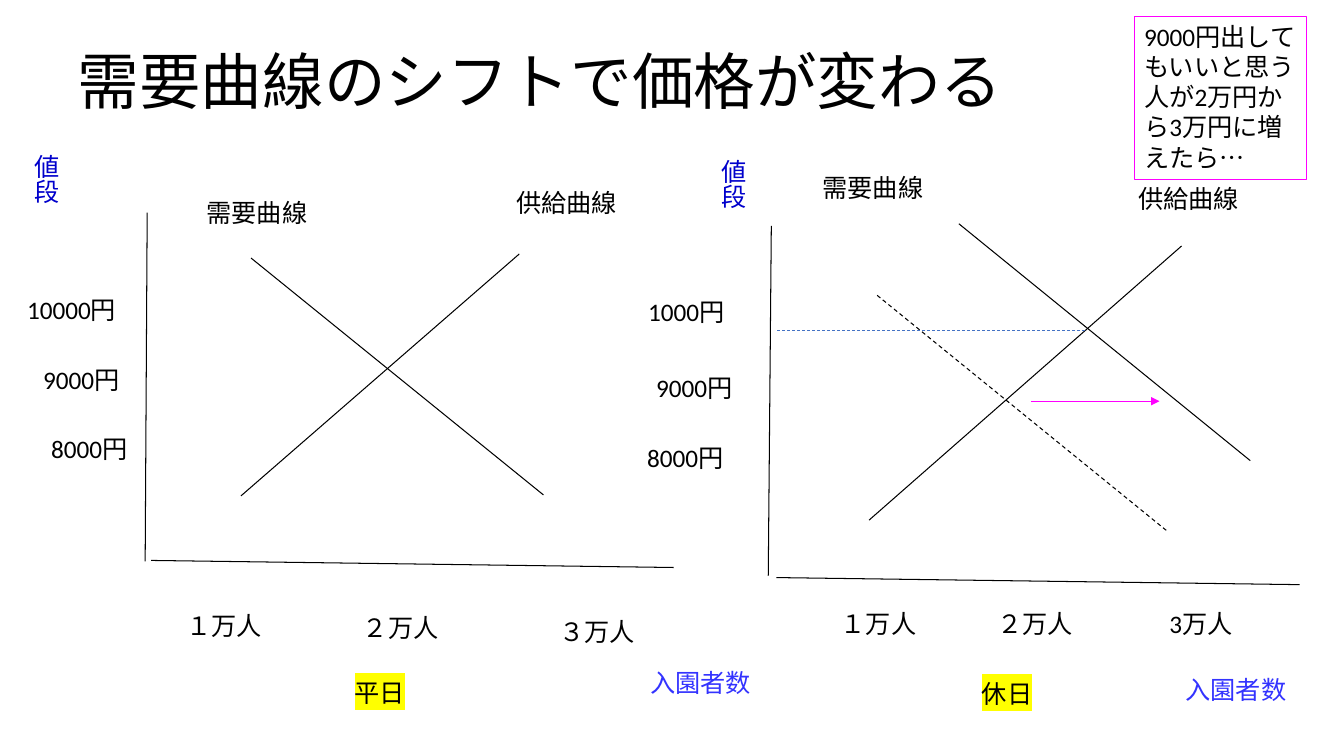
from dataclasses import dataclass

import pptx
import pptx.dml.color
import pptx.enum.dml
import pptx.enum.shapes
import pptx.enum.text
import pptx.oxml
import pptx.oxml.ns
import pptx.util
from pptx.util import Inches


@dataclass(frozen=True)
class Theme:
    font: str = "Calibri"
    title_size: int = 44
    body_size: int = 18
    ink: str = "000000"
    price: str = "0000CC"
    visitors: str = "3333FF"
    shift: str = "FF00FF"
    guide: str = "4472C4"
    marker: str = "FFFF00"
    thin: float = 0.5
    normal: float = 0.75


THEME = Theme()
LABEL_HEIGHT = 0.4


def rgb(color):
    return pptx.dml.color.RGBColor.from_string(color)


def element(tag, **attributes):
    node = pptx.oxml.parse_xml(f"<a:{tag} {pptx.oxml.ns.nsdecls('a')}/>")
    for key, value in attributes.items():
        node.set(key, value)
    return node


def style(paragraph, size, color):
    paragraph.alignment = pptx.enum.text.PP_ALIGN.LEFT
    paragraph.font.name = THEME.font
    paragraph.font.size = pptx.util.Pt(size)
    paragraph.font.color.rgb = rgb(color)


def add_title(slide, text):
    title = slide.shapes.title
    title.left, title.top = Inches(0.67), Inches(0.21)
    title.width, title.height = Inches(12), Inches(1.25)
    title.text_frame.text = text
    title.text_frame.vertical_anchor = pptx.enum.text.MSO_ANCHOR.MIDDLE
    heading = title.text_frame.paragraphs[0]
    heading.line_spacing = 0.9
    style(heading, THEME.title_size, THEME.ink)


def add_label(slide, text, left, top, width, height=LABEL_HEIGHT, color=THEME.ink):
    label = slide.shapes.add_textbox(
        Inches(left), Inches(top), Inches(width), Inches(height))
    frame = label.text_frame
    frame.word_wrap = True
    frame.auto_size = pptx.enum.text.MSO_AUTO_SIZE.SHAPE_TO_FIT_TEXT
    frame.text = text
    style(frame.paragraphs[0], THEME.body_size, color)
    return label


def add_vertical_label(slide, text, left, top, height):
    label = add_label(slide, text, left, top, 0.5, height, THEME.price)
    label.text_frame._txBody.bodyPr.set("vert", "eaVert")


def add_marked_label(slide, text, left, top, width):
    label = add_label(slide, text, left, top, width)
    run = label.text_frame.paragraphs[0].runs[0]
    highlight = element("highlight")
    highlight.append(element("srgbClr", val=THEME.marker))
    run.font._element.append(highlight)


def add_line(slide, start, end, color=THEME.ink, weight=THEME.normal,
             dashed=False, arrow=False):
    line = slide.shapes.add_connector(
        pptx.enum.shapes.MSO_CONNECTOR.STRAIGHT,
        *map(Inches, start), *map(Inches, end))
    line.line.color.rgb = rgb(color)
    line.line.width = pptx.util.Pt(weight)
    if dashed:
        line.line.dash_style = pptx.enum.dml.MSO_LINE.DASH
    if arrow:
        line.line._get_or_add_ln().append(element("tailEnd", type="triangle"))
    line._element.spPr.append(element("effectLst"))


def add_callout(slide, text, left, top, width, height):
    callout = slide.shapes.add_shape(
        pptx.enum.shapes.MSO_SHAPE.RECTANGLE,
        Inches(left), Inches(top), Inches(width), Inches(height))
    callout.shadow.inherit = False
    callout.fill.background()
    callout.line.color.rgb = rgb(THEME.shift)
    callout.line.width = pptx.util.Pt(THEME.normal)
    frame = callout.text_frame
    frame.word_wrap = True
    frame.vertical_anchor = pptx.enum.text.MSO_ANCHOR.TOP
    frame.text = text
    style(frame.paragraphs[0], THEME.body_size, THEME.ink)


def add_weekday_market(slide):
    add_line(slide, (1.46, 2.11), (1.44, 5.57))
    add_line(slide, (1.5, 5.56), (6.68, 5.63))
    add_line(slide, (2.39, 4.92), (5.15, 2.52))
    add_line(slide, (2.49, 2.56), (5.39, 4.91))
    add_vertical_label(slide, "値段", 0.16, 1.43, 0.79)
    for label in (
        ("需要曲線", 1.95, 1.91, 1.6),
        ("供給曲線", 5.02, 1.81, 1.56),
        ("10000円", 0.17, 2.87, 1.18),
        ("9000円", 0.33, 3.57, 1.18),
        ("8000円", 0.41, 4.25, 1.26),
        ("１万人", 1.75, 6.01, 1.02),
        ("２万人", 3.5, 6.03, 1.18),
        ("３万人", 5.45, 6.07, 1.02),
    ):
        add_label(slide, *label)
    add_label(slide, "入園者数", 6.35, 6.57, 1.35, color=THEME.visitors)
    add_marked_label(slide, "平日", 3.42, 6.67, 1.12)


def add_holiday_market(slide):
    add_line(slide, (7.65, 2.24), (7.62, 5.71))
    add_line(slide, (7.7, 5.73), (12.89, 5.8))
    add_line(slide, (8.62, 5.16), (11.72, 2.44))
    add_line(slide, (8.7, 2.93), (11.59, 5.28), dashed=True)
    add_line(slide, (9.51, 2.22), (12.4, 4.57))
    add_vertical_label(slide, "値段", 6.97, 1.48, 0.72)
    for label in (
        ("需要曲線", 8.06, 1.66, 1.6),
        ("供給曲線", 11.19, 1.77, 1.56),
        ("1000円", 6.33, 2.89, 1.18),
        ("9000円", 6.41, 3.64, 1.18),
        ("8000円", 6.32, 4.34, 1.09),
        ("１万人", 8.24, 5.99, 1.02),
        ("２万人", 9.79, 5.99, 1.18),
        ("3万人", 11.5, 5.99, 1.02),
    ):
        add_label(slide, *label)
    add_label(slide, "入園者数", 11.66, 6.64, 1.5, color=THEME.visitors)
    add_marked_label(slide, "休日", 9.64, 6.68, 1.18)
    add_line(slide, (10.23, 3.98), (11.5, 3.98), THEME.shift, THEME.thin, arrow=True)
    add_line(slide, (10.76, 3.28), (7.7, 3.28), THEME.guide, THEME.thin, dashed=True)


def main():
    deck = pptx.Presentation()
    deck.slide_width, deck.slide_height = Inches(13.33), Inches(7.5)
    slide = deck.slides.add_slide(deck.slide_layouts.get_by_name("Title Only"))
    add_title(slide, "需要曲線のシフトで価格が変わる")
    add_weekday_market(slide)
    add_holiday_market(slide)
    add_callout(slide, "9000円出してもいいと思う人が2万円から3万円に増えたら…",
                11.25, 0.16, 1.71, 1.62)
    deck.save("out.pptx")


if __name__ == "__main__":
    main()
